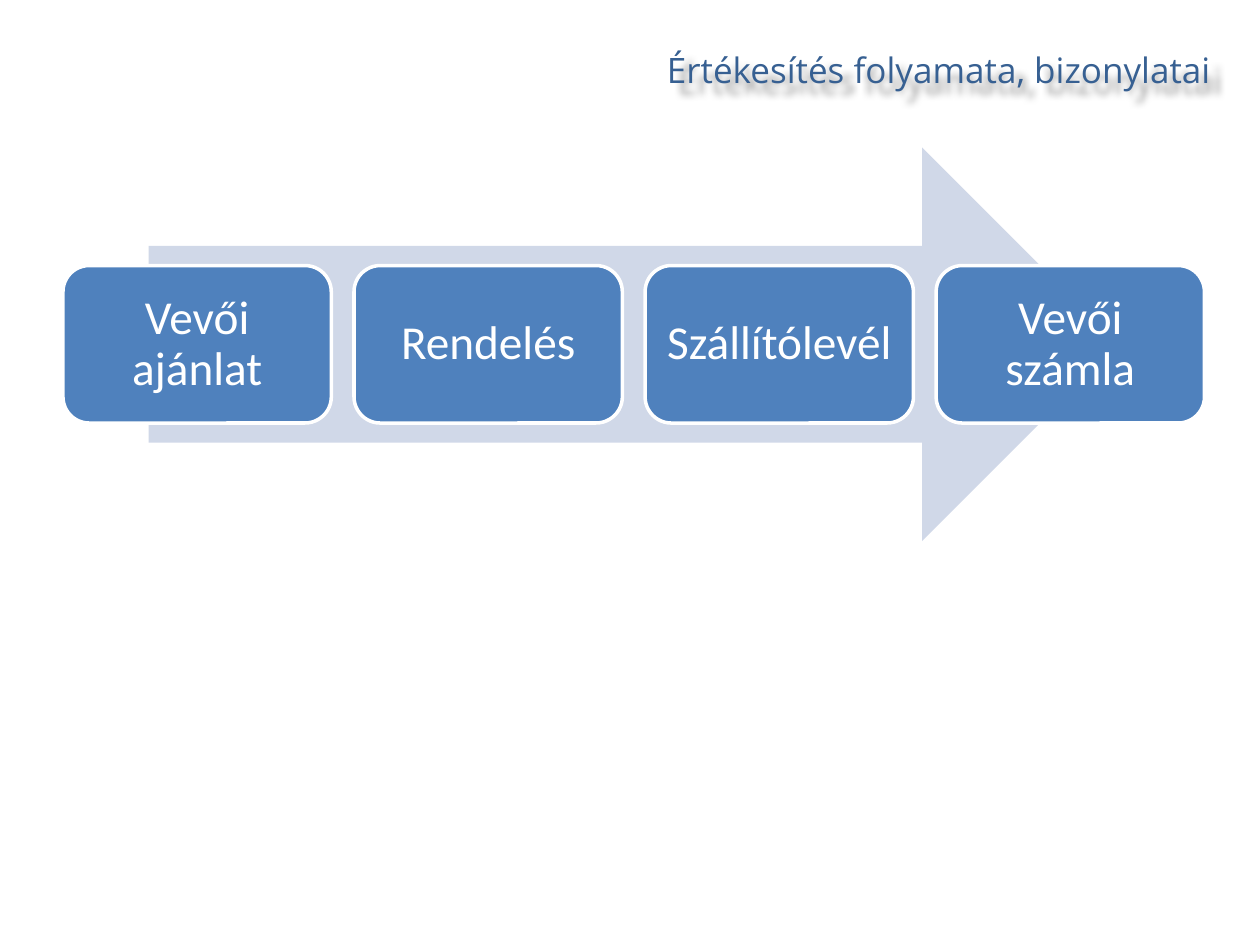
"""Builds a slide showing the steps and documents of the sales process."""
from dataclasses import dataclass

import lxml.etree
import pptx
import pptx.dml.color
import pptx.enum.shapes
import pptx.enum.text
import pptx.oxml
import pptx.oxml.ns
import pptx.util

HEADING = "Értékesítés folyamata, bizonylatai"
STEPS = ["Vevői ajánlat", "Rendelés", "Szállítólevél", "Vevői számla"]

Inches = pptx.util.Inches
Align = pptx.enum.text.PP_ALIGN
Preset = pptx.enum.shapes.MSO_SHAPE


@dataclass(frozen=True)
class Theme:
    heading: str = "376092"
    arrow: str = "D0D8E8"
    step: str = "4F81BD"
    light: str = "FFFFFF"
    heading_font: str = "Open Sans"
    step_font: str = "Calibri"
    heading_size: int = 20
    step_size: int = 27


THEME = Theme()
SLIDE_W, SLIDE_H = 10, 7.5
MARGIN = 0.05 * SLIDE_W
STEP_W, STEP_H, GAP = 2.13, 1.25, 0.18
FLOW_W = len(STEPS) * (STEP_W + GAP) - GAP
ARROW_W, ARROW_H = 0.85 * FLOW_W, 2.5 * STEP_H
ARROW_TOP = 1.17
FLOW_CENTER = ARROW_TOP + ARROW_H / 2
SHADOW = (
    '<a:effectLst %s><a:outerShdw blurRad="50800" dist="101600" dir="2700000"'
    ' algn="tl" rotWithShape="0"><a:srgbClr val="000000"><a:alpha val="40000"/>'
    "</a:srgbClr></a:outerShdw></a:effectLst>" % pptx.oxml.ns.nsdecls("a")
)


def rgb(value):
    return pptx.dml.color.RGBColor.from_string(value)


def write(shape, text, *, font, size, color, align, inset, spacing=1.0):
    frame = shape.text_frame
    frame.word_wrap = True
    frame.auto_size = pptx.enum.text.MSO_AUTO_SIZE.NONE
    frame.vertical_anchor = pptx.enum.text.MSO_ANCHOR.MIDDLE
    frame.margin_left = frame.margin_right = Inches(inset)
    frame.margin_top = frame.margin_bottom = Inches(inset)
    paragraph = frame.paragraphs[0]
    paragraph.alignment = align
    paragraph.line_spacing = spacing
    run = paragraph.add_run()
    run.text = text
    run.font.name = font
    run.font.size = pptx.util.Pt(size)
    run.font.color.rgb = rgb(color)


def add_block(slide, preset, left, top, width, height, fill, line=None):
    block = slide.shapes.add_shape(
        preset, Inches(left), Inches(top), Inches(width), Inches(height))
    block.shadow.inherit = False
    block.fill.solid()
    block.fill.fore_color.rgb = rgb(fill)
    if line:
        block.line.color.rgb = rgb(line)
        block.line.width = pptx.util.Pt(2)
    else:
        block.line.fill.background()
    return block


def add_heading(slide):
    heading = slide.shapes.title
    heading.left, heading.top = Inches(3.28), Inches(0.32)
    heading.width, heading.height = Inches(6.43), Inches(0.46)
    write(heading, HEADING, font=THEME.heading_font, size=THEME.heading_size,
          color=THEME.heading, align=Align.RIGHT, inset=0.1)
    heading.fill.background()
    heading.element.spPr.append(pptx.oxml.parse_xml(SHADOW))


def add_flow(slide):
    add_block(slide, Preset.RIGHT_ARROW, MARGIN + (FLOW_W - ARROW_W) / 2,
              ARROW_TOP, ARROW_W, ARROW_H, THEME.arrow)
    for column, label in enumerate(STEPS):
        step = add_block(slide, Preset.ROUNDED_RECTANGLE,
                         MARGIN + column * (STEP_W + GAP),
                         FLOW_CENTER - STEP_H / 2, STEP_W, STEP_H,
                         THEME.step, THEME.light)
        write(step, label, font=THEME.step_font, size=THEME.step_size,
              color=THEME.light, align=Align.CENTER, inset=0.11, spacing=0.9)


def main():
    deck = pptx.Presentation()
    deck.slide_width, deck.slide_height = Inches(SLIDE_W), Inches(SLIDE_H)
    slide = deck.slides.add_slide(deck.slide_layouts[5])
    add_heading(slide)
    add_flow(slide)
    deck.save("out.pptx")


if __name__ == "__main__":
    main()
